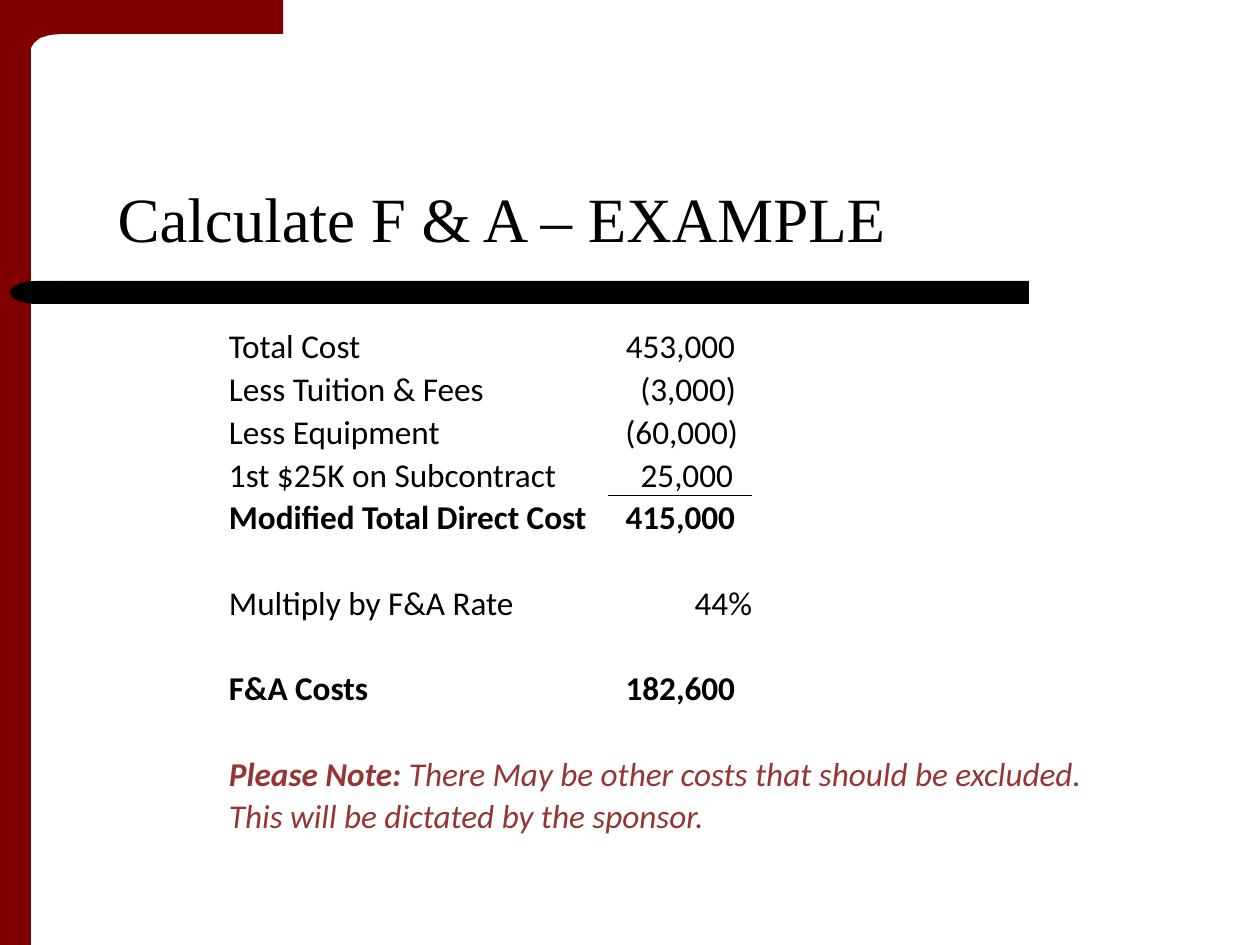
import dataclasses

import pptx
import pptx.dml.color
import pptx.enum.shapes
import pptx.enum.text
import pptx.oxml
import pptx.oxml.ns
import pptx.util


@dataclasses.dataclass(frozen=True)
class Theme:
    maroon: str = "800000"
    black: str = "000000"
    note: str = "963634"
    title_font: str = "Times New Roman"
    body_font: str = "Calibri"
    title_size: int = 36
    body_size: int = 19


theme = Theme()
PX = 914400 / 126  # EMU per pixel


def px(*lengths):
    return [round(length * PX) for length in lengths]


def write(paragraph, text, font=theme.body_font, size=theme.body_size,
          color=theme.black, bold=False, italic=False):
    run = paragraph.add_run()
    run.text = text
    run.font.name = font
    run.font.size = pptx.util.Pt(size)
    run.font.bold = bold
    run.font.italic = italic
    run.font.color.rgb = pptx.dml.color.RGBColor.from_string(color)


presentation = pptx.Presentation()
presentation.slide_width, presentation.slide_height = px(1260, 945)
slide = presentation.slides.add_slide(presentation.slide_layouts[5])

# Maroon frame and black rule
corner = slide.shapes.build_freeform(283, 0, scale=PX)
corner.add_line_segments([(283, 34), (62, 34), (50, 35), (40, 38), (34, 43),
                          (31, 48), (31, 53), (0, 53), (0, 0)])
corner_shape = corner.convert_to_shape()
kinds = pptx.enum.shapes.MSO_SHAPE
side_bar = slide.shapes.add_shape(kinds.RECTANGLE, *px(0, 0, 31, 945))
rule = slide.shapes.add_shape(kinds.RECTANGLE, *px(63, 281, 966, 23))
rule_cap = slide.shapes.add_shape(kinds.FLOWCHART_DELAY, *px(10, 281, 54, 23))
rule_cap.rotation = 180
for shape, color in [(side_bar, theme.maroon), (corner_shape, theme.maroon),
                     (rule, theme.black), (rule_cap, theme.black)]:
    shape.shadow.inherit = False
    shape.fill.solid()
    shape.fill.fore_color.rgb = pptx.dml.color.RGBColor.from_string(color)
    shape.line.fill.background()

# Title
title = slide.shapes.title
title.left, title.top, title.width, title.height = px(105, 105, 1092, 157)
frame = title.text_frame
frame.auto_size = pptx.enum.text.MSO_AUTO_SIZE.NONE
frame.vertical_anchor = pptx.enum.text.MSO_ANCHOR.BOTTOM
paragraph = frame.paragraphs[0]
paragraph.alignment = pptx.enum.text.PP_ALIGN.LEFT
paragraph.line_spacing = 0.9
write(paragraph, "Calculate F & A – EXAMPLE", font=theme.title_font,
      size=theme.title_size)

# Cost table: row number, label, amount, bold, right margin of the amount
costs = [
    (0, "Total Cost", "453,000", False, 18),
    (1, "Less Tuition & Fees", "(3,000)", False, 17),
    (2, "Less Equipment", "(60,000)", False, 15),
    (3, "1st $25K on Subcontract", "25,000", False, 20),
    (4, "Modified Total Direct Cost", "415,000", True, 18),
    (6, "Multiply by F&A Rate", "44%", False, 1),
    (8, "F&A Costs", "182,600", True, 18),
]
column_widths = [381, 144] + [72] * 5
row_count, table_height = 12, 513
table = slide.shapes.add_table(
    row_count, len(column_widths),
    *px(228, 325, sum(column_widths), table_height)).table
table.first_row = False
table.horz_banding = False
for column, width in zip(table.columns, px(*column_widths)):
    column.width = width
for row in table.rows:
    row.height = px(table_height / row_count)[0]
for cell in table.iter_cells():
    cell.fill.background()
    cell.vertical_anchor = pptx.enum.text.MSO_ANCHOR.BOTTOM
    cell.margin_left, cell.margin_right, cell.margin_top = px(1, 1, 1)
    cell.margin_bottom = 0

for row, label, amount, bold, right_margin in costs:
    write(table.cell(row, 0).text_frame.paragraphs[0], label, bold=bold)
    cell = table.cell(row, 1)
    cell.margin_right = px(right_margin)[0]
    paragraph = cell.text_frame.paragraphs[0]
    paragraph.alignment = pptx.enum.text.PP_ALIGN.RIGHT
    write(paragraph, amount, bold=bold)

# Sum line between the last item and the total
for row, edge in [(3, "lnB"), (4, "lnT")]:
    border = pptx.oxml.parse_xml(
        f'<a:{edge} {pptx.oxml.ns.nsdecls("a")} w="{pptx.util.Pt(0.5)}">'
        f'<a:solidFill><a:srgbClr val="{theme.black}"/></a:solidFill></a:{edge}>')
    table.cell(row, 1)._tc.get_or_add_tcPr().insert(0, border)

# Note across the full table width
notes = [
    (10, [("Please Note:", True),
          (" There May be other costs that should be excluded.", False)]),
    (11, [("This will be dictated by the sponsor.", False)]),
]
for row, runs in notes:
    cell = table.cell(row, 0)
    cell.merge(table.cell(row, len(column_widths) - 1))
    for text, bold in runs:
        write(cell.text_frame.paragraphs[0], text, color=theme.note,
              bold=bold, italic=True)

presentation.save("out.pptx")
